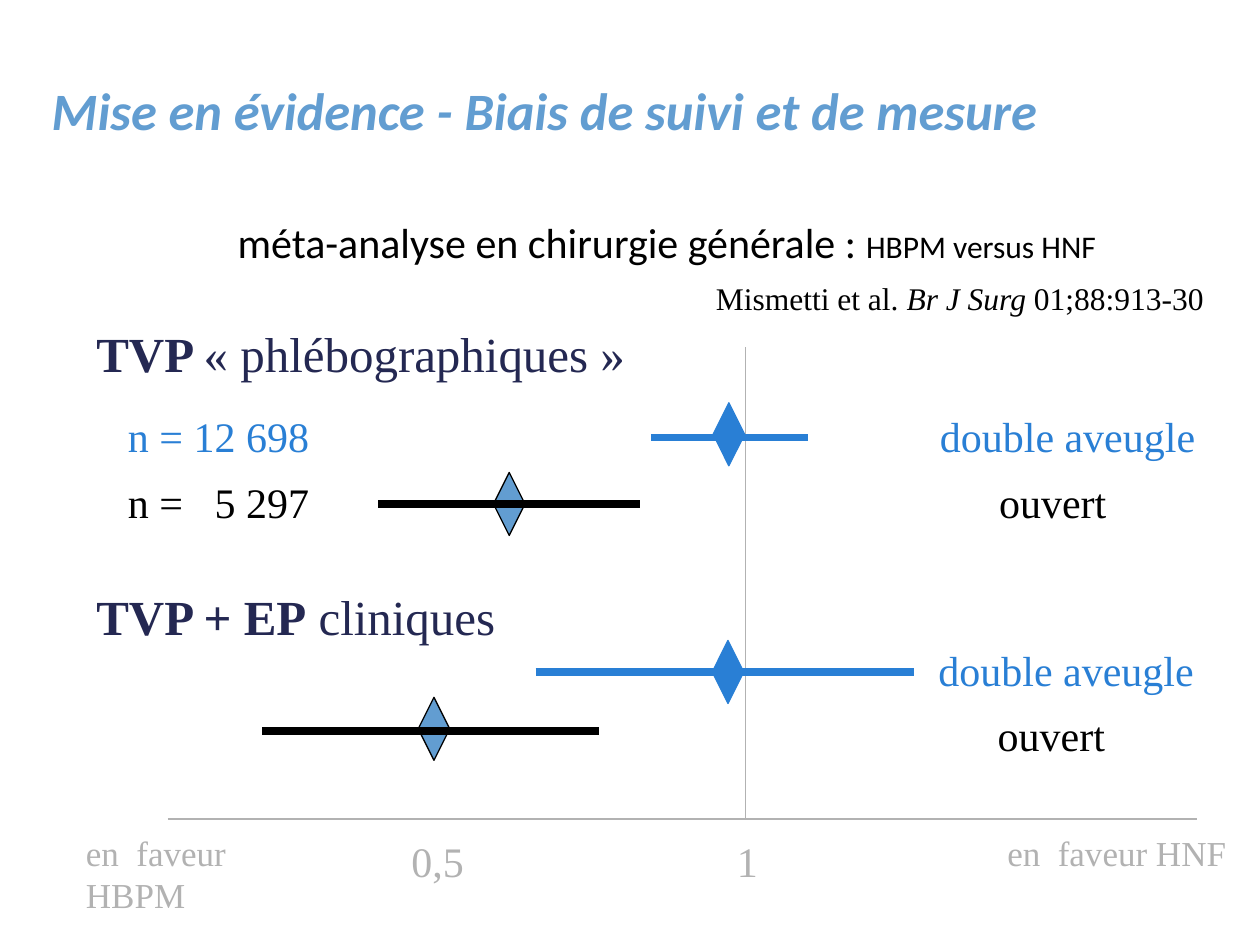
from dataclasses import dataclass
from lxml.etree import SubElement
from pptx import Presentation
from pptx.dml.color import RGBColor
from pptx.enum.shapes import MSO_CONNECTOR, MSO_SHAPE
from pptx.enum.text import MSO_ANCHOR, MSO_AUTO_SIZE, PP_ALIGN
from pptx.oxml.ns import qn
from pptx.util import Pt


@dataclass(frozen=True)
class Theme:
    sans: str = "Calibri"
    serif: str = "Times New Roman"
    accent: RGBColor = RGBColor(0x62, 0x9D, 0xD1)
    blind: RGBColor = RGBColor(0x29, 0x7F, 0xD5)
    navy: RGBColor = RGBColor(0x24, 0x28, 0x52)
    black: RGBColor = RGBColor(0, 0, 0)
    grey: RGBColor = RGBColor(0xB2, 0xB2, 0xB2)
    title: int = 30
    heading: int = 28
    text: int = 24
    side: int = 20
    small: int = 18


theme = Theme()
deck = Presentation()
deck.slide_width, deck.slide_height = Pt(720), Pt(540)
page = deck.slides.add_slide(deck.slide_layouts[1])


def add_label(left, top, width, height, size, color, *parts):
    """Add a one-line text box; each part is (text, bold, italic)."""
    box = page.shapes.add_textbox(Pt(left), Pt(top), Pt(width), Pt(height))
    box.text_frame.word_wrap = False
    box.text_frame.auto_size = MSO_AUTO_SIZE.SHAPE_TO_FIT_TEXT
    para = box.text_frame.paragraphs[0]
    para.font.name, para.font.size = theme.serif, Pt(size)
    para.font.color.rgb = color
    for text, bold, italic in parts:
        span = para.add_run()
        span.text = text
        span.font.bold, span.font.italic = bold, italic


def add_line(x1, y1, x2, y2, color, weight):
    line = page.shapes.add_connector(
        MSO_CONNECTOR.STRAIGHT, Pt(x1), Pt(y1), Pt(x2), Pt(y2))
    line.line.color.rgb, line.line.width = color, Pt(weight)
    SubElement(line._element.spPr, qn("a:effectLst"))


# Title
title = page.shapes.title
title.left, title.top, title.width, title.height = Pt(22.3), Pt(18), Pt(667.4), Pt(66.2)
title.text_frame.auto_size = MSO_AUTO_SIZE.NONE
title.text_frame.vertical_anchor = MSO_ANCHOR.BOTTOM
para = title.text_frame.paragraphs[0]
para.text = "Mise en évidence - Biais de suivi et de mesure"
para.alignment = PP_ALIGN.LEFT
para.font.name, para.font.size = theme.sans, Pt(theme.title)
para.font.bold = para.font.italic = True
para.font.color.rgb = theme.accent

# Subtitle in the body placeholder, without bullet
body = page.placeholders[1]
body.left, body.top, body.width, body.height = Pt(42), Pt(120), Pt(678), Pt(42)
body.text_frame.auto_size = MSO_AUTO_SIZE.NONE
para = body.text_frame.paragraphs[0]
para.alignment = PP_ALIGN.CENTER
para.font.name, para.font.color.rgb = theme.sans, theme.black
properties = para._p.get_or_add_pPr()
properties.set("marL", str(Pt(27)))
properties.set("indent", str(Pt(-27)))
properties.insert(0, properties.makeelement(qn("a:buNone"), {}))
for text, size in [("méta-analyse en chirurgie générale : ", theme.text),
                   ("HBPM versus HNF", theme.small)]:
    span = para.add_run()
    span.text, span.font.size = text, Pt(size)

# Axis and line of no effect
add_line(96, 468, 684, 468, theme.grey, 0.75)
add_line(426, 468, 426, 198, theme.grey, 0.75)

# Axis captions
for text, left, top, width, height, size in [
        ("1", 414, 474, 26.6, 36, theme.text),
        ("0,5", 228, 474, 44.6, 36, theme.text),
        ("en  faveur HBPM", 42, 471.5, 156, 31, theme.side),
        ("en  faveur HNF", 568.5, 471.5, 140, 31, theme.side)]:
    add_label(left, top, width, height, size, theme.grey, (text, False, False))

# Source and outcome headings
add_label(402, 156, 294, 29, theme.small, theme.black,
          ("Mismetti et al. ", False, False), ("Br J Surg", False, True),
          (" 01;88:913-30", False, False))
add_label(48, 181.5, 318, 41, theme.heading, theme.navy,
          ("TVP ", True, False), ("« phlébographiques »", False, False))
add_label(48, 331.5, 244, 41, theme.heading, theme.navy,
          ("TVP + EP", True, False), (" cliniques", False, False))

# Estimates: interval start and end, its height, diamond corner, design label
for start, end, y, left, top, is_blind, label_left, label_top in [
        (372, 462, 250, 407.5, 230.2, True, 530, 231),
        (216, 366, 288, 282, 270, False, 563.8, 268.5),
        (306, 522, 384, 407, 366, True, 529.2, 365),
        (150, 342, 417.5, 239, 398.5, False, 563, 402)]:
    color = theme.blind if is_blind else theme.black
    diamond = page.shapes.add_shape(
        MSO_SHAPE.DIAMOND, Pt(left), Pt(top), Pt(18), Pt(36))
    diamond.shadow.inherit = False
    diamond.fill.solid()
    diamond.fill.fore_color.rgb = theme.blind if is_blind else theme.accent
    diamond.line.color.rgb, diamond.line.width = color, Pt(0.75)
    add_line(start, y, end, y, color, 4.5)
    add_label(label_left, label_top, 160.5 if is_blind else 75.5, 36, theme.text, color,
              ("double aveugle" if is_blind else "ouvert", False, False))

# Sample sizes
for text, top, color in [("n = 12 698", 231, theme.blind),
                         ("n =   5 297", 268.5, theme.black)]:
    add_label(66, top, 118, 36, theme.text, color, (text, False, False))

deck.save("out.pptx")
